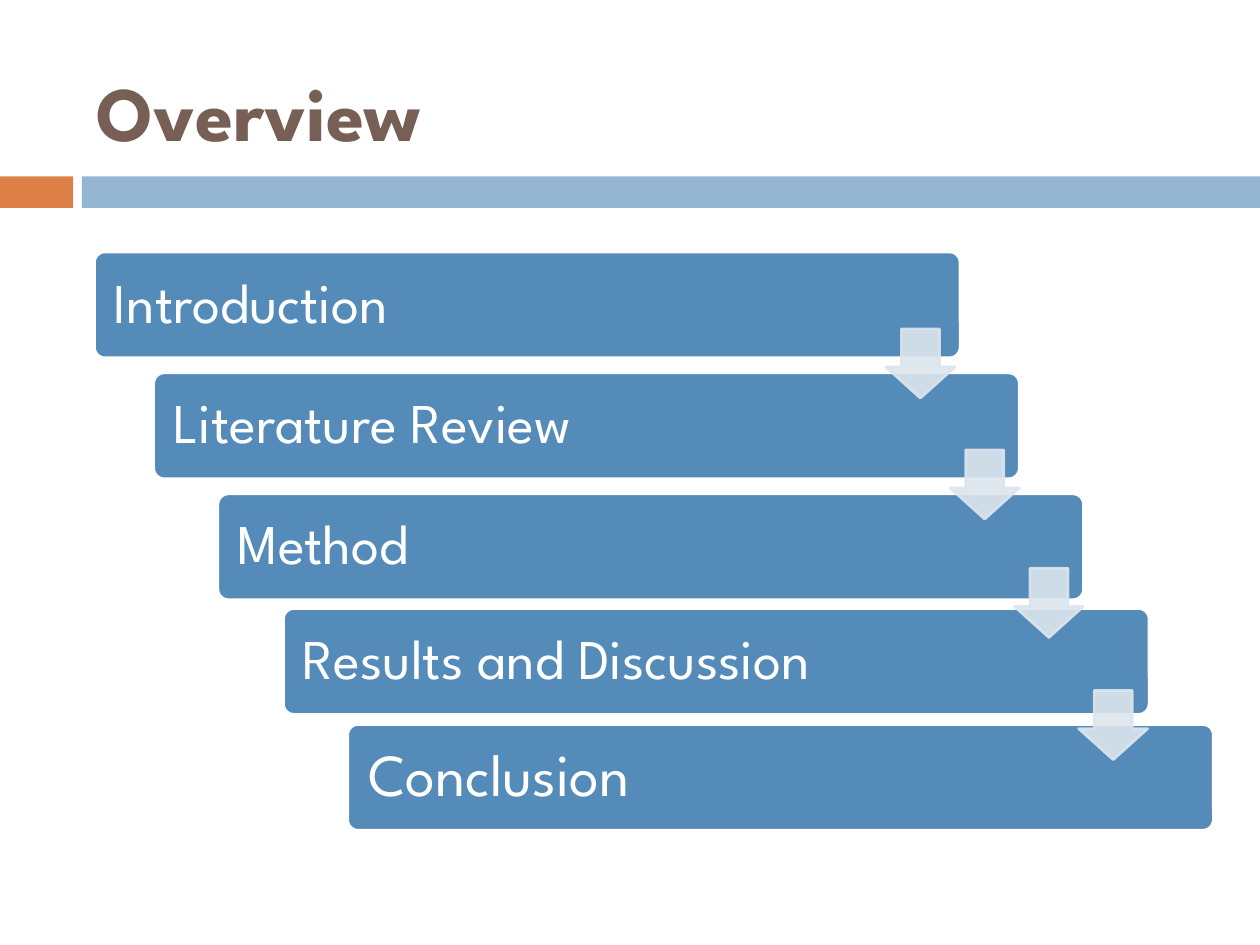
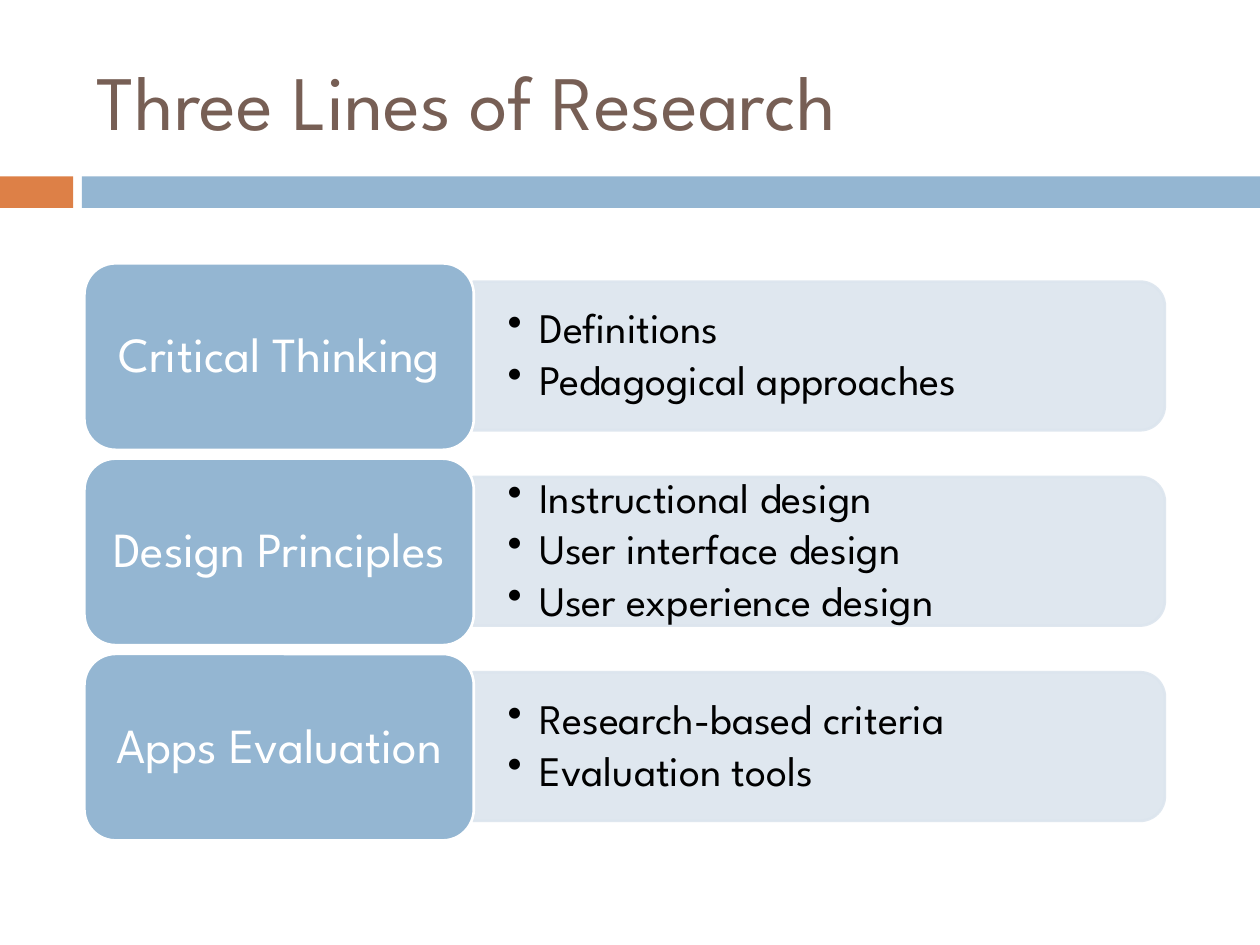
from dataclasses import dataclass

from lxml import etree
from pptx import Presentation
from pptx import util as u
from pptx.dml.color import RGBColor
from pptx.enum import shapes, text
from pptx.oxml import ns

# Shared look; the grid has 100 columns and 75 rows of a tenth of an inch
CELL = u.Inches(0.1)
COLUMNS, ROWS = 100, 75
FONT = "League Spartan"
WHITE, BLACK, BROWN = "FFFFFF", "000000", "775F55"
ORANGE, SKY, BLUE, MIST = "DD8047", "94B6D2", "558BB8", "DCE5EE"
KIND = shapes.MSO_SHAPE
ALIGN = text.PP_ALIGN


@dataclass(frozen=True)
class Area:
    left: float
    top: float
    width: float
    height: float

    def lengths(self) -> list[int]:
        return [round(n * CELL) for n in (self.left, self.top, self.width, self.height)]


@dataclass(frozen=True)
class Style:
    size: float
    color: str
    align: ALIGN = ALIGN.LEFT
    bold: bool = False
    inset: tuple[float, float] = (1, 0.5)
    line_spacing: float = 1.0
    after: int = 0
    bullet: bool = False


@dataclass(frozen=True)
class Step:
    name: str
    left: float
    top: float
    size: int = 32
    inset: float = 1.3


@dataclass(frozen=True)
class Research:
    name: str
    topics: tuple[str, ...]


STEPS = [
    Step("Introduction", 7.5, 20),
    Step("Literature Review", 12.2, 29.6),
    Step("Method", 17.3, 39.2),
    Step("Results and Discussion", 22.5, 48.3),
    Step("Conclusion", 27.6, 57.5, 34, 1.4),
]
ARROW_TOPS = [26.1, 35.7, 45.1, 54.8]
RESEARCH = [
    Research("Critical Thinking", ("Definitions", "Pedagogical approaches")),
    Research("Design Principles", ("Instructional design", "User interface design",
                                   "User experience design")),
    Research("Apps Evaluation", ("Research-based criteria", "Evaluation tools")),
]
NAME_STYLE = Style(28, WHITE, ALIGN.CENTER, inset=(1.2, 0.6), line_spacing=0.9, after=35)
TOPIC_STYLE = Style(24, BLACK, inset=(2.7, 1.4), line_spacing=0.9, after=15, bullet=True)


def paint(target, color: str, alpha: int = 100) -> None:
    """Set a solid colour on a fill, with an optional opacity in percent."""
    target.solid()
    target.fore_color.rgb = RGBColor.from_string(color)
    if alpha < 100:
        # The colour element is the only srgbClr inside this fill
        color_xml = target._xPr.find(ns.qn("a:solidFill")).find(ns.qn("a:srgbClr"))
        etree.SubElement(color_xml, ns.qn("a:alpha"), val=str(alpha * 1000))


def add_block(page, kind: KIND, area: Area, fill: str, line: str | None = None,
              alpha: int = 100, adjust: tuple[float, ...] = ()):
    block = page.shapes.add_shape(kind, *area.lengths())
    block.shadow.inherit = False
    paint(block.fill, fill, alpha)
    if line:
        block.line.width = u.Pt(1.5)
        paint(block.line.fill, line, alpha)
    else:
        block.line.fill.background()
    for index, value in enumerate(adjust):
        block.adjustments[index] = value
    return block


def write(box, lines: tuple[str, ...], style: Style) -> None:
    frame = box.text_frame
    frame.word_wrap = True
    frame.vertical_anchor = text.MSO_ANCHOR.MIDDLE
    across, down = (round(n * CELL) for n in style.inset)
    frame.margin_left = frame.margin_right = across
    frame.margin_top = frame.margin_bottom = down
    for index, line in enumerate(lines):
        para = frame.add_paragraph() if index else frame.paragraphs[0]
        para.text = line
        para.alignment = style.align
        para.line_spacing = style.line_spacing
        para.font.name = FONT
        para.font.size = u.Pt(style.size)
        para.font.bold = style.bold
        para.font.color.rgb = RGBColor.from_string(style.color)
        finish_paragraph(para, style)


def finish_paragraph(para, style: Style) -> None:
    """Add relative spacing and a hanging bullet."""
    props = para._p.get_or_add_pPr()
    default_font = props.find(ns.qn("a:defRPr"))
    extras = []
    if style.after:
        spacing = etree.Element(ns.qn("a:spcAft"))
        etree.SubElement(spacing, ns.qn("a:spcPct"), val=str(style.after * 1000))
        extras.append(spacing)
    if style.bullet:
        props.set("marL", str(u.Inches(0.25)))
        props.set("indent", str(-u.Inches(0.25)))
        extras.append(etree.Element(ns.qn("a:buChar"), char="•"))
    for extra in extras:
        if default_font is None:
            props.append(extra)
        else:
            default_font.addprevious(extra)


def add_text(page, area: Area, lines: tuple[str, ...], style: Style) -> None:
    write(page.shapes.add_textbox(*area.lengths()), lines, style)


def add_page(deck, title: str, title_area: Area, bold: bool = False):
    page = deck.slides.add_slide(deck.slide_layouts[6])
    add_block(page, KIND.RECTANGLE, Area(0, 14, 5.8, 2.5), ORANGE)
    add_block(page, KIND.RECTANGLE, Area(6.5, 14, COLUMNS - 6.5, 2.5), SKY)
    add_text(page, title_area, (title,), Style(44, BROWN, bold=bold))
    return page


def build_overview(deck) -> None:
    page = add_page(deck, "Overview", Area(6.7, 2.5, 90, 12.5), bold=True)
    # Staircase of sections
    for step in STEPS:
        bar = add_block(page, KIND.ROUNDED_RECTANGLE, Area(step.left, step.top, 68.7, 8.4),
                        BLUE, WHITE, adjust=(0.1,))
        write(bar, (step.name,), Style(step.size, WHITE, inset=(step.inset, step.inset),
                                       line_spacing=0.9, after=35))
    # Arrows from each section to the next
    for index, top in enumerate(ARROW_TOPS):
        add_block(page, KIND.DOWN_ARROW, Area(70.3 + 5.1 * index, top, 5.5, 5.5),
                  MIST, MIST, alpha=90, adjust=(0.55, 0.45))


def build_research(deck) -> None:
    page = add_page(deck, "Three Lines of Research", Area(6.7, 2.5, 89.2, 10.8))
    for index, research in enumerate(RESEARCH):
        top = 20.9 + 15.5 * index
        # The topic panel is a tall shape turned on its side
        panel = add_block(page, KIND.ROUND_2_SAME_RECTANGLE,
                          Area(59.1, top - 20.1, 11.8, 54.9), MIST, MIST, alpha=90)
        panel.rotation = 90
        add_text(page, Area(37.6, top + 2, 54.3, 10.7), research.topics, TOPIC_STYLE)
        label = add_block(page, KIND.ROUNDED_RECTANGLE, Area(6.7, top, 30.9, 14.8), SKY, WHITE)
        write(label, (research.name,), NAME_STYLE)


def main() -> None:
    deck = Presentation()
    deck.slide_width, deck.slide_height = COLUMNS * CELL, ROWS * CELL
    build_overview(deck)
    build_research(deck)
    deck.save("out.pptx")


if __name__ == "__main__":
    main()
